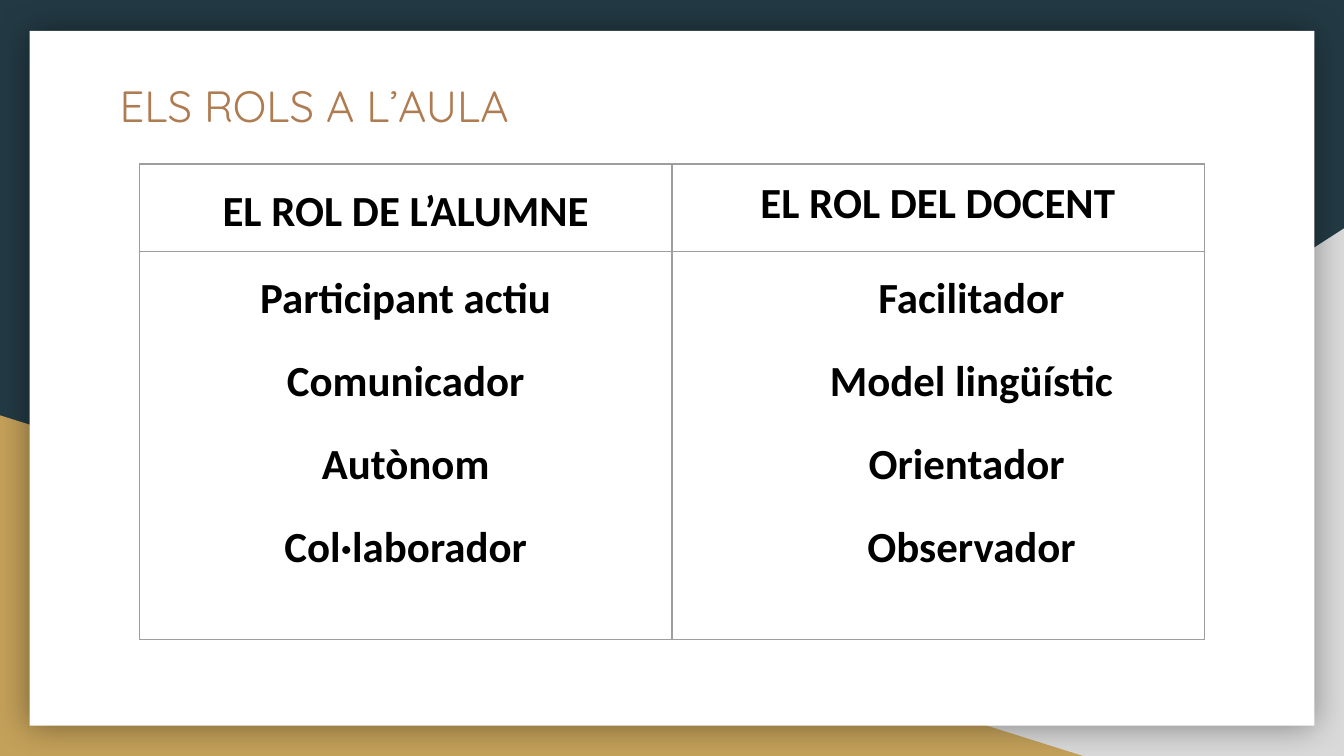
from lxml.etree import SubElement
from pptx import Presentation
from pptx.dml.color import RGBColor
from pptx.enum.shapes import MSO_SHAPE as Preset
from pptx.enum.text import MSO_ANCHOR as Anchor, MSO_AUTO_SIZE as AutoSize, PP_ALIGN as Align
from pptx.oxml import parse_xml
from pptx.oxml.ns import nsdecls, qn
from pptx.util import Inches, Pt

NAVY = RGBColor(0x23, 0x3A, 0x44)
GRAY = RGBColor(0xD9, 0xD9, 0xD9)
GOLD = RGBColor(0xC4, 0xA1, 0x5A)
WHITE = RGBColor(0xFF, 0xFF, 0xFF)
BROWN = RGBColor(0xAF, 0x7B, 0x51)
BLACK = RGBColor(0, 0, 0)
BORDER = RGBColor(0x9E, 0x9E, 0x9E)

HEADINGS = ["EL ROL DE L’ALUMNE", "EL ROL DEL DOCENT"]
STUDENT_ROLES = ["Participant actiu", "Comunicador", "Autònom", "Col·laborador"]
TEACHER_ROLES = ["Facilitador", "Model lingüístic", "Orientador ", "Observador"]


def add_panel(slide, preset, box, color):
    """Add a borderless filled shape in the given box."""
    shape = slide.shapes.add_shape(preset, *map(Inches, box))
    shape.shadow.inherit = False
    shape.fill.solid()
    shape.fill.fore_color.rgb = color
    shape.line.fill.background()
    return shape


def add_soft_shadow(shape):
    """Give the shape a centred, blurred black shadow."""
    effects = shape._element.spPr.find(qn("a:effectLst"))
    effects.append(parse_xml(
        f'<a:outerShdw {nsdecls("a")} blurRad="{Pt(18)}" dist="0" dir="0" algn="ctr" rotWithShape="0">'
        '<a:srgbClr val="000000"><a:alpha val="40000"/></a:srgbClr></a:outerShdw>'))


def add_backdrop(slide, width, height):
    """Draw the coloured corners and the white sheet on a slide of the given size."""
    slide.background.fill.solid()
    slide.background.fill.fore_color.rgb = NAVY
    gray_corner = add_panel(slide, Preset.RIGHT_TRIANGLE, (3.92, 1.7, width - 3.92, height - 1.7), GRAY)
    gray_corner._element.spPr.xfrm.set("flipH", "1")
    add_panel(slide, Preset.RIGHT_TRIANGLE, (0, 3.09, 8.06, height - 3.09), GOLD)
    sheet = add_panel(slide, Preset.RECTANGLE, (0.22, 0.23, width - 0.44, 5.17), WHITE)
    add_soft_shadow(sheet)


def write_run(paragraph, text, font_name, size, color, bold=False):
    """Add one formatted run to the paragraph."""
    run = paragraph.add_run()
    run.text = text
    run.font.name = font_name
    run.font.size = Pt(size)
    run.font.color.rgb = color
    run.font.bold = bold


def set_spacing(paragraph):
    """Apply the common line and paragraph spacing."""
    paragraph.line_spacing = 1.15
    paragraph.space_before = Pt(12)


def place_title(slide, box, text):
    """Move the title placeholder in front of the backdrop and fill it."""
    title = slide.shapes.title
    slide.shapes._spTree.append(title._element)
    title.left, title.top, title.width, title.height = map(Inches, box)
    frame = title.text_frame
    frame.word_wrap = True
    frame.auto_size = AutoSize.NONE
    frame.vertical_anchor = Anchor.TOP
    frame.margin_left = frame.margin_right = frame.margin_top = frame.margin_bottom = Inches(0.1)
    paragraph = frame.paragraphs[0]
    paragraph.alignment = Align.JUSTIFY
    set_spacing(paragraph)
    write_run(paragraph, text, "Quicksand", 23.4, BROWN)


def format_cell(cell):
    """Clear the cell's fill, set its margins and outline it."""
    cell.margin_left = cell.margin_right = cell.margin_top = cell.margin_bottom = Inches(0.1)
    properties = cell._tc.get_or_add_tcPr()
    for side in ("a:lnL", "a:lnR", "a:lnT", "a:lnB"):
        line = SubElement(properties, qn(side), w=str(Pt(0.75)))
        fill = SubElement(line, qn("a:solidFill"))
        SubElement(fill, qn("a:srgbClr"), val=str(BORDER))
    cell.fill.background()


def fill_cell(cell, lines, indent=0, spaced=True):
    """Write centred bold lines into the cell, one paragraph each."""
    format_cell(cell)
    frame = cell.text_frame
    for index, text in enumerate(lines):
        paragraph = frame.add_paragraph() if index else frame.paragraphs[0]
        paragraph.alignment = Align.CENTER
        if spaced:
            set_spacing(paragraph)
        if indent:
            properties = paragraph._p.get_or_add_pPr()
            properties.set("marL", str(Inches(indent)))
            properties.set("indent", "0")
        write_run(paragraph, text, "Calibri", 23, BLACK, bold=True)


def add_roles_table(slide, box):
    """Build the two-column table of roles in the given box."""
    left, top, width, height = map(Inches, box)
    table = slide.shapes.add_table(2, 2, left, top, width, height).table
    table.first_row = table.horz_banding = False
    table.rows[0].height = Inches(0.65)
    table.rows[1].height = height - Inches(0.65)
    fill_cell(table.cell(0, 0), HEADINGS[:1])
    fill_cell(table.cell(0, 1), HEADINGS[1:], spaced=False)
    fill_cell(table.cell(1, 0), STUDENT_ROLES)
    table.cell(1, 0).text_frame.paragraphs[-1].space_after = Pt(12)
    fill_cell(table.cell(1, 1), TEACHER_ROLES, indent=0.5)


def main():
    """Build and save the presentation."""
    presentation = Presentation()
    width = 10
    height = width * 9 / 16
    presentation.slide_width = Inches(width)
    presentation.slide_height = Inches(height)
    slide = presentation.slides.add_slide(presentation.slide_layouts[5])
    add_backdrop(slide, width, height)
    place_title(slide, (0.79, 0.43, 8.21, 0.6), "ELS ROLS A L’AULA")
    add_roles_table(slide, (1.04, 1.22, 7.92, 3.54))
    presentation.save("out.pptx")


if __name__ == "__main__":
    main()
